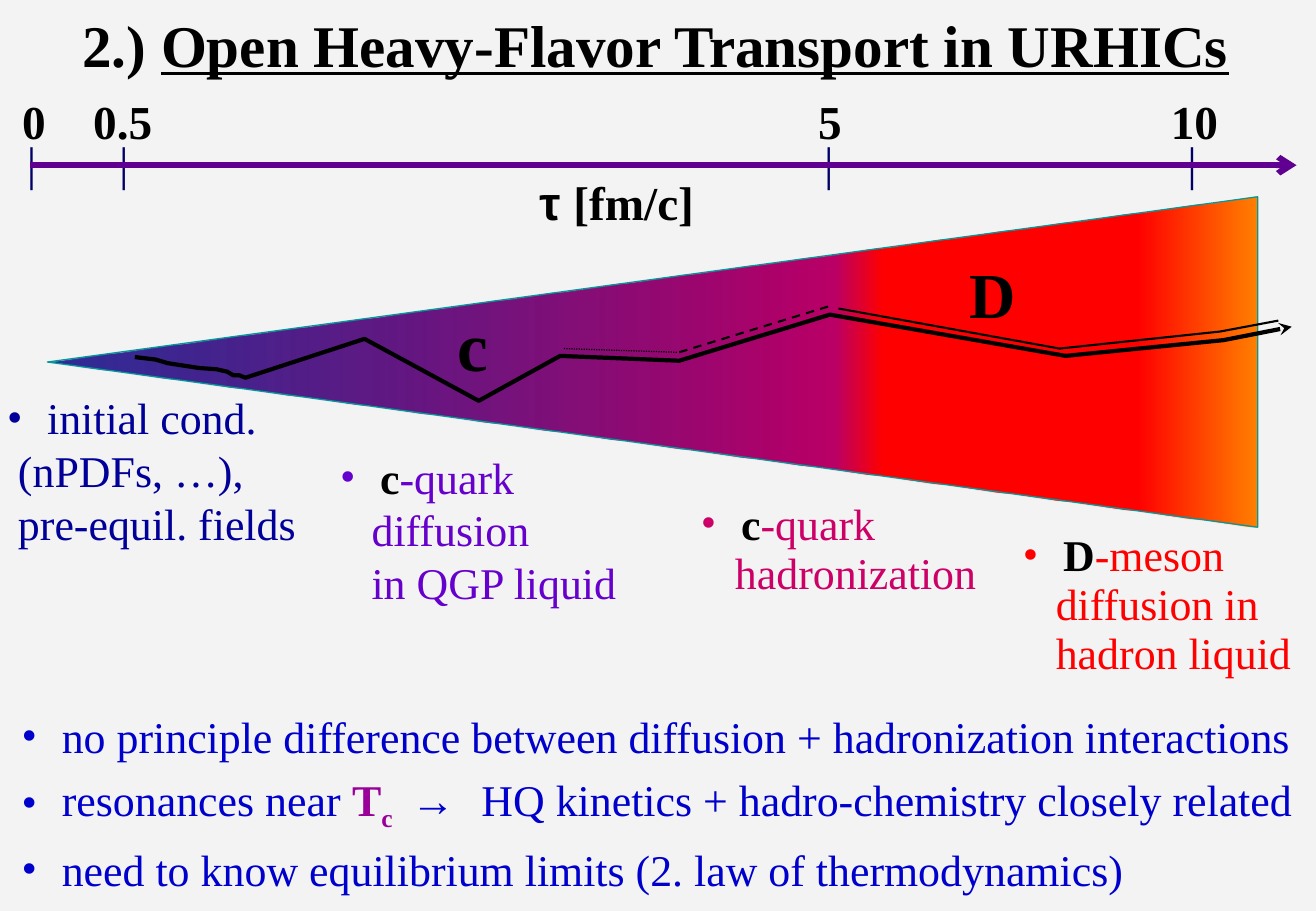
from dataclasses import dataclass

from lxml.etree import SubElement
from pptx import Presentation
from pptx.dml.color import RGBColor
from pptx.enum.dml import MSO_LINE
from pptx.enum.shapes import MSO_CONNECTOR, MSO_SHAPE
from pptx.enum.text import MSO_ANCHOR, PP_ALIGN
from pptx.oxml import parse_xml
from pptx.oxml.ns import nsdecls, qn
from pptx.util import Inches, Pt


@dataclass(frozen=True)
class Theme:
    serif: str = "Times New Roman"
    sans: str = "Arial"
    paper: str = "F3F3F3"
    ink: str = "010000"
    navy: str = "000099"
    blue: str = "0000CC"
    violet: str = "6600CC"
    purple: str = "990099"
    pink: str = "CC0066"
    red: str = "FF0000"
    axis: str = "600090"
    tick: str = "000066"
    edge: str = "009999"
    title: float = 35
    scale: float = 28
    body: float = 26
    quark: float = 41
    meson: float = 38


THEME = Theme()
HANG = 0.33
TIGHT = 28.9

# Position (inches) and opacity (percent) follow the fireball's cooling
HEAT = [(0, "000082", 81), (65, "BA0066", 100), (69, "FF0000", 100),
        (90, "FF0000", 100), (100, "FF8200", 100)]

# Centre of the mark, centre of the label, label
TICKS = [(0.26, 0.28, "0"), (1.02, 1.01, "0.5"),
         (6.82, 6.83, "5"), (9.81, 9.83, "10")]

TRACK = [(1.11, 2.94), (1.28, 2.96), (1.38, 2.99), (1.64, 3.03), (1.78, 3.04),
         (1.87, 3.06), (1.92, 3.09), (1.97, 3.09), (2.02, 3.11), (3, 2.79),
         (3.94, 3.3), (4.61, 2.93), (5.59, 2.97), (6.83, 2.59), (8.77, 2.93),
         (10.07, 2.8), (10.63, 2.69)]
PARTNER = [(6.9, 2.54), (8.72, 2.87), (10.04, 2.73), (10.52, 2.64)]

# Left, top, width, colour, indent of later lines, line spacing, lines
NOTES = [
    (-0.04, 3.17, 2.7, THEME.navy, 0.09, None,
     [["initial cond."], ["(nPDFs, …),"], ["pre-equil. fields"]]),
    (2.7, 3.66, 2.94, THEME.violet, 0.26, None,
     [[("c", {"bold": True, "color": THEME.ink}), "-quark"],
      ["diffusion"], ["in QGP liquid"]]),
    (5.67, 4.07, 2.6, THEME.pink, 0.28, TIGHT,
     [[("c", {"bold": True, "color": THEME.ink}), "-quark"],
      ["hadronization"]]),
    (8.32, 4.33, 2.51, THEME.red, 0.27, TIGHT,
     [[("D", {"bold": True, "color": THEME.ink}), "-meson"],
      ["diffusion in"], ["hadron liquid"]]),
]

POINTS = [
    ["no principle difference between diffusion + hadronization interactions"],
    ["resonances near ",
     ("T", {"bold": True, "color": THEME.purple}),
     ("c", {"bold": True, "color": THEME.purple, "base": -25}),
     (" → ", {"spread": 4.5}),
     "HQ kinetics + hadro-chemistry closely related"],
    ["need to know equilibrium limits (2. law of thermodynamics)"],
]


def add_run(para, text, size, color, font=THEME.serif, bold=False,
            under=False, base=0, spread=0):
    """Add a run; base is a shift in percent, spread is tracking in points."""
    run = para.add_run()
    run.text = text
    run.font.name = font
    run.font.size = Pt(size)
    run.font.bold = bold
    run.font.underline = under
    run.font.color.rgb = RGBColor.from_string(color)
    if base:
        run.font._element.set("baseline", str(base * 1000))
    if spread:
        run.font._element.set("spc", str(int(spread * 100)))


def set_indent(para, left, bullet=None):
    """Indent a paragraph; a bullet colour also hangs a bullet before it."""
    props = para._p.get_or_add_pPr()
    props.set("marL", str(Inches(left)))
    props.set("indent", str(-Inches(left) if bullet else 0))
    if bullet:
        tint = SubElement(props, qn("a:buClr"))
        SubElement(tint, qn("a:srgbClr"), val=bullet)
        SubElement(props, qn("a:buFont"), typeface=THEME.serif)
        SubElement(props, qn("a:buChar"), char="•")


def add_text(slide, lines, left, top, width, height, size=THEME.body,
             color=THEME.ink, bold=False, align=PP_ALIGN.LEFT,
             anchor=MSO_ANCHOR.TOP, pitch=None, before=0, bullets=0, rest=0):
    """Write lines of runs; the first few lines may carry bullets."""
    box = slide.shapes.add_textbox(Inches(left), Inches(top),
                                   Inches(width), Inches(height))
    frame = box.text_frame
    frame.word_wrap = True
    frame.vertical_anchor = anchor
    for row, line in enumerate(lines):
        para = frame.add_paragraph() if row else frame.paragraphs[0]
        para.alignment = align
        para.space_before = Pt(before)
        if pitch:
            para.line_spacing = Pt(pitch)
        if row < bullets:
            set_indent(para, HANG, color)
        else:
            set_indent(para, rest)
        for piece in line:
            text, extra = (piece, {}) if isinstance(piece, str) else piece
            add_run(para, text, **{"size": size, "color": color,
                                   "bold": bold, **extra})


def style_line(shape, color, width, dash=None, tail=None):
    shape.line.color.rgb = RGBColor.from_string(color)
    shape.line.width = Pt(width)
    if dash:
        shape.line.dash_style = dash
    if tail:
        SubElement(shape.line._get_or_add_ln(), qn("a:tailEnd"), type=tail)


def add_line(slide, start, end, color, width, **look):
    line = slide.shapes.add_connector(
        MSO_CONNECTOR.STRAIGHT, *(Inches(n) for n in (*start, *end)))
    style_line(line, color, width, **look)
    SubElement(line._element.spPr, qn("a:effectLst"))


def add_track(slide, points, width, **look):
    spots = [(Inches(x), Inches(y)) for x, y in points]
    pen = slide.shapes.build_freeform(*spots[0])
    pen.add_line_segments(spots[1:], close=False)
    track = pen.convert_to_shape()
    track.fill.background()
    track.shadow.inherit = False
    style_line(track, THEME.ink, width, **look)


def add_cone(slide):
    """Draw the expanding fireball, a triangle with its tip to the left."""
    cone = slide.shapes.add_shape(MSO_SHAPE.ISOSCELES_TRIANGLE, Inches(4.01),
                                  Inches(-2), Inches(2.72), Inches(9.96))
    cone.rotation = 270
    cone.shadow.inherit = False
    style_line(cone, THEME.edge, 0.75)
    stops = "".join(
        f'<a:gs pos="{pos * 1000}"><a:srgbClr val="{color}">'
        f'<a:alpha val="{alpha * 1000}"/></a:srgbClr></a:gs>'
        for pos, color, alpha in HEAT)
    fill = parse_xml(
        f'<a:gradFill {nsdecls("a")} rotWithShape="1"><a:gsLst>{stops}'
        '</a:gsLst><a:lin ang="5400000" scaled="0"/></a:gradFill>')
    cone._element.spPr.find(qn("a:prstGeom")).addnext(fill)


def add_axis(slide):
    for mark, centre, label in TICKS:
        add_text(slide, [["|"]], mark - 0.4, 1.05, 0.8, 0.58,
                 size=THEME.scale, color=THEME.tick, align=PP_ALIGN.CENTER)
        add_text(slide, [[label]], centre - 0.4, 0.71, 0.8, 0.58,
                 size=THEME.scale, bold=True, align=PP_ALIGN.CENTER)
    add_line(slide, (0.25, 1.36), (10.67, 1.36), THEME.axis, 3.5,
             tail="arrow")
    add_text(slide, [[("τ ", {"font": THEME.sans}), "[fm/c]"]],
             4.34, 1.38, 1.7, 0.58, size=THEME.scale, bold=True)


def main():
    deck = Presentation()
    deck.slide_width, deck.slide_height = Inches(10.83), Inches(7.5)
    slide = deck.slides.add_slide(deck.slide_layouts[6])
    slide.background.fill.solid()
    slide.background.fill.fore_color.rgb = RGBColor.from_string(THEME.paper)

    heading = "Open Heavy-Flavor Transport in URHICs"
    add_text(slide, [["2.) ", (heading, {"under": True})]],
             -0.07, -0.04, 10.93, 0.8, size=THEME.title, bold=True,
             align=PP_ALIGN.CENTER, anchor=MSO_ANCHOR.MIDDLE)
    add_cone(slide)
    add_axis(slide)

    add_track(slide, TRACK, 2.5, tail="stealth")
    add_track(slide, PARTNER, 1.25)
    add_line(slide, (5.59, 2.9), (6.86, 2.51), THEME.ink, 1.25,
             dash=MSO_LINE.DASH)
    add_line(slide, (4.64, 2.87), (5.57, 2.9), THEME.ink, 0.75,
             dash=MSO_LINE.ROUND_DOT)
    for name, left, top, size in (("c", 3.67, 2.72, THEME.quark),
                                  ("D", 7.88, 2.28, THEME.meson)):
        add_text(slide, [[name]], left, top, 0.7, 0.51, size=size,
                 bold=True, pitch=TIGHT)

    for left, top, width, color, rest, pitch, lines in NOTES:
        add_text(slide, lines, left, top, width, 1.42, color=color,
                 pitch=pitch, bullets=1, rest=rest)
    add_text(slide, POINTS, 0.08, 5.79, 10.75, 1.59, color=THEME.blue,
             before=6.2, bullets=len(POINTS))
    deck.save("out.pptx")


if __name__ == "__main__":
    main()
